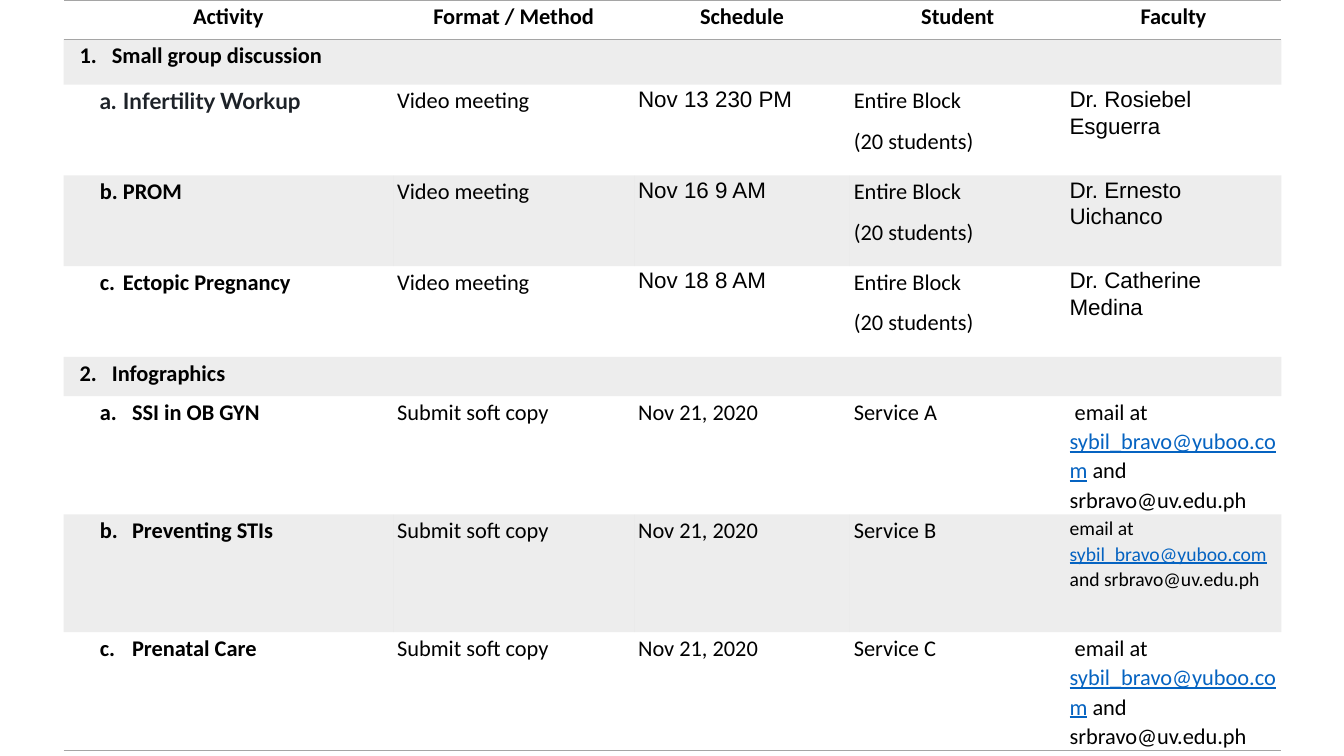
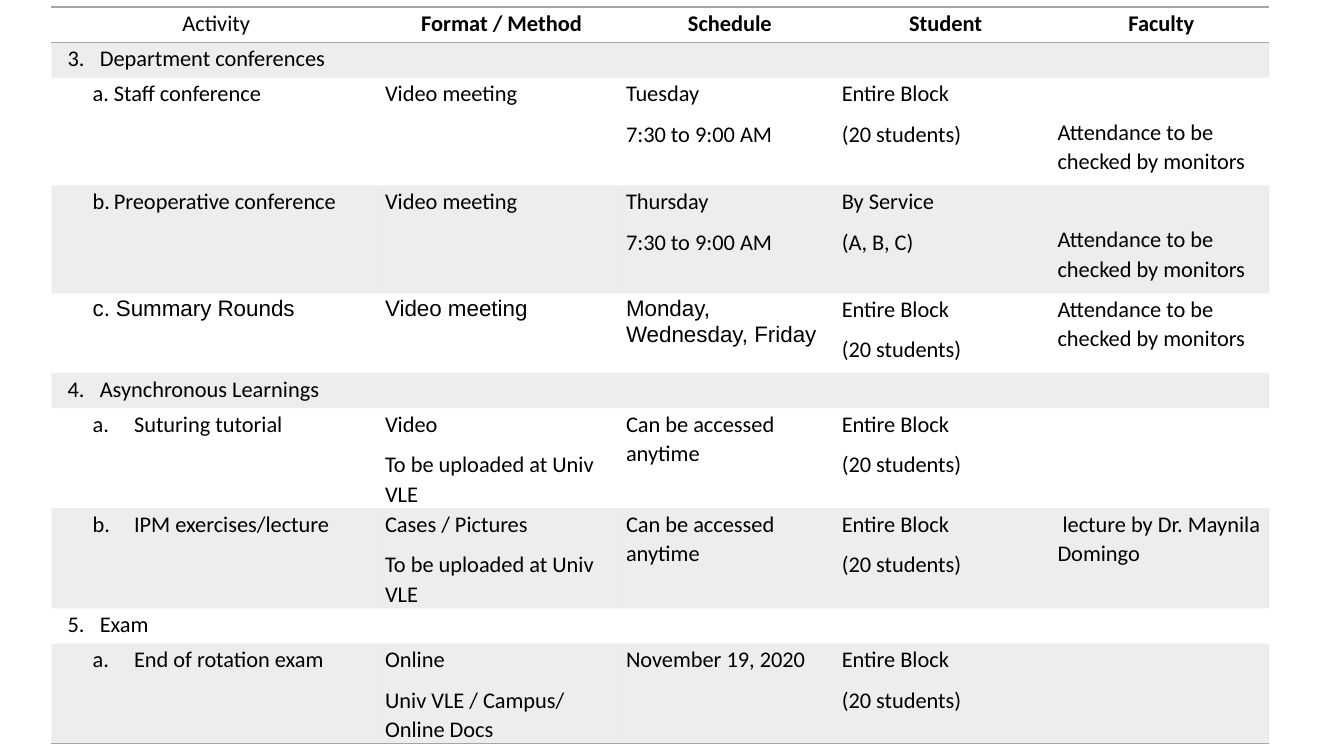
from dataclasses import dataclass

from lxml import etree
from pptx import Presentation
from pptx import util as u
from pptx.dml.color import RGBColor
from pptx.enum import text
from pptx.oxml import ns

PX = 9144
PLAIN_TABLE = "{2D5ABB26-0587-4C30-8999-92F81FD0307C}"


@dataclass(frozen=True)
class Theme:
    ink: str = "000000"
    soft_ink: str = "1D2228"
    link: str = "0563C1"
    rule: str = "A5A5A5"
    band: str = "A5A5A5"
    band_alpha: int = 20000
    body: str = "Calibri"
    plain: str = "Arial"
    accent: str = "Lato"
    size: int = 16
    small: int = 14
    line_spacing: float = 1.07
    space_after: int = 8


THEME = Theme()


@dataclass
class Run:
    text: str
    font: str = THEME.body
    color: str = THEME.ink
    size: int = THEME.size
    bold: bool = False
    underline: bool = False


@dataclass
class Cell:
    paragraphs: list
    scheme: str = ""
    number: int = 1
    left: int = 0
    hang: int = 0
    top: int = 1
    centred: bool = False


def lines(*wording, top=1, **style):
    return Cell([[Run(line, **style)] for line in wording], top=top)


def heading(wording, bold=True):
    return Cell([[Run(wording, bold=bold)]], centred=True)


def section(number, wording, bold=False):
    return [Cell([[Run(wording, bold=bold)]], "arabicPeriod", number, 12, 32)]


def item(number, wording, left, hang, **style):
    return Cell([[Run(wording, **style)]], "alphaLcPeriod", number, left, hang)


def contact(lead, size=THEME.size):
    return Cell([[Run(lead, size=size),
                  Run("sybil_bravo@yuboo.com", color=THEME.link, size=size, underline=True),
                  Run(" and srbravo@uv.edu.ph", size=size)]])


class Deck:
    def __init__(self, theme):
        self.theme = theme
        self.prs = Presentation()
        self.prs.slide_width, self.prs.slide_height = 1333 * PX, 750 * PX
        self.slide = None

    def new_slide(self):
        self.slide = self.prs.slides.add_slide(self.prs.slide_layouts[6])

    def schedule(self, left, top, widths, heights, rows):
        frame = self.slide.shapes.add_table(
            len(rows), len(widths), left * PX, top * PX, sum(widths) * PX, sum(heights) * PX)
        table = frame.table
        table.first_row = table.horz_banding = False
        table._tbl.tblPr.find(ns.qn("a:tableStyleId")).text = PLAIN_TABLE
        for column, width in zip(table.columns, widths):
            column.width = width * PX
        for row, height in zip(table.rows, heights):
            row.height = height * PX
        last = len(rows) - 1
        for r, entries in enumerate(rows):
            sides = {0: ("lnT", "lnB"), last: ("lnB",)}.get(r, ())
            for c in range(len(widths)):
                entry = entries[c] if c < len(entries) else Cell([[]])
                self.cell(table.cell(r, c), entry, r % 2 == 1, sides)
            if len(entries) == 1:
                table.cell(r, 0).merge(table.cell(r, len(widths) - 1))

    def cell(self, target, entry, banded, sides):
        target.margin_left = target.margin_right = 4 * PX
        target.margin_top, target.margin_bottom = entry.top * PX, 0
        if banded:
            target.fill.solid()
            target.fill.fore_color.rgb = RGBColor.from_string(self.theme.band)
            tint = target._tc.tcPr.find(".//" + ns.qn("a:srgbClr"))
            etree.SubElement(tint, ns.qn("a:alpha"), val=str(self.theme.band_alpha))
        else:
            target.fill.background()
        for position, side in enumerate(sides):
            self.border(target, side, position)
        frame = target.text_frame
        for index, runs in enumerate(entry.paragraphs):
            paragraph = frame.add_paragraph() if index else frame.paragraphs[0]
            self.paragraph(paragraph, runs, entry)

    def border(self, target, side, position):
        line = etree.Element(ns.qn("a:" + side), w=str(u.Pt(1)))
        fill = etree.SubElement(line, ns.qn("a:solidFill"))
        etree.SubElement(fill, ns.qn("a:srgbClr"), val=self.theme.rule)
        target._tc.tcPr.insert(position, line)

    def paragraph(self, paragraph, runs, entry):
        paragraph.line_spacing = self.theme.line_spacing
        paragraph.space_after = u.Pt(self.theme.space_after)
        if entry.centred:
            paragraph.alignment = text.PP_ALIGN.CENTER
        if entry.scheme:
            properties = paragraph._p.get_or_add_pPr()
            properties.set("marL", str((entry.left + entry.hang) * PX))
            properties.set("indent", str(-entry.hang * PX))
            etree.SubElement(properties, ns.qn("a:buAutoNum"),
                             type=entry.scheme, startAt=str(entry.number))
        for piece in runs:
            run = paragraph.add_run()
            run.text = piece.text
            font = run.font
            font.name, font.size = piece.font, u.Pt(piece.size)
            font.bold, font.underline = piece.bold, piece.underline
            font.color.rgb = RGBColor.from_string(piece.color)
        if not runs:
            etree.SubElement(paragraph._p, ns.qn("a:endParaRPr"),
                             sz=str(self.theme.size * 100))

    def save(self):
        self.prs.save("out.pptx")


WIDTHS = [327, 239, 214, 214, 214]
HEADINGS = [heading(name) for name in ("Format / Method", "Schedule", "Student", "Faculty")]
MEETING = lines("Video meeting")
SOFT_COPY = lines("Submit soft copy")
DUE_DATE = lines("Nov 21, 2020")
BLOCK = lines("Entire Block", "(20 students)")
ANYTIME = lines("Can be accessed anytime")
UPLOAD = "To be uploaded at Univ VLE"
MONITORS = "Attendance to be checked by monitors"
EMPTY = Cell([[]])


def discussion(number, topic, when, faculty, **style):
    return [item(number, topic, 32, 23, bold=True, **style), MEETING,
            lines(when, font=THEME.plain), BLOCK, lines(faculty, font=THEME.plain)]


def infographic(number, topic, service, address):
    return [item(number, topic, 32, 32, bold=True), SOFT_COPY, DUE_DATE,
            lines(service), address]


def conference(number, topic, day, *students):
    return [item(number, topic, 37, 21), MEETING, lines(day, "7:30 to 9:00 AM"),
            lines(*students), lines(MONITORS, top=39)]


def main():
    deck = Deck(THEME)

    deck.new_slide()
    deck.schedule(63, 0, WIDTHS, [39, 45, 90, 90, 90, 39, 117, 117, 117], [
        [heading("Activity"), *HEADINGS],
        section(1, "Small group discussion", bold=True),
        discussion(1, "Infertility Workup", "Nov 13 230 PM", "Dr. Rosiebel Esguerra",
                   font=THEME.accent, color=THEME.soft_ink),
        discussion(2, "PROM", "Nov 16 9 AM", "Dr. Ernesto Uichanco"),
        discussion(3, "Ectopic Pregnancy", "Nov 18 8 AM", "Dr. Catherine Medina"),
        section(2, "Infographics", bold=True),
        infographic(1, "SSI in OB GYN", "Service A", contact(" email at ")),
        infographic(2, "Preventing STIs", "Service B", contact("email at ", THEME.small)),
        infographic(3, "Prenatal Care", "Service C", contact(" email at ")),
    ])

    deck.new_slide()
    deck.schedule(51, 7, WIDTHS, [35, 35, 107, 107, 79, 35, 99, 99, 35, 99], [
        [heading("Activity", bold=False), *HEADINGS],
        section(3, "Department conferences"),
        conference(1, "Staff conference", "Tuesday", "Entire Block", "(20 students)"),
        conference(2, "Preoperative conference", "Thursday", "By Service", "(A, B, C)"),
        [item(3, "Summary Rounds", 37, 23, font=THEME.plain),
         lines("Video meeting", font=THEME.plain),
         lines("Monday, Wednesday, Friday", font=THEME.plain), BLOCK, lines(MONITORS)],
        section(4, "Asynchronous Learnings"),
        [item(1, "Suturing tutorial", 37, 41), lines("Video", UPLOAD), ANYTIME, BLOCK, EMPTY],
        [item(2, "IPM exercises/lecture", 37, 41), lines("Cases / Pictures", UPLOAD),
         ANYTIME, BLOCK, lines(" lecture by Dr. Maynila Domingo")],
        section(5, "Exam"),
        [item(1, "End of rotation exam", 37, 41),
         lines("Online", "Univ VLE / Campus/ Online Docs"),
         lines("November 19, 2020"), BLOCK, EMPTY],
    ])

    deck.save()


if __name__ == "__main__":
    main()
